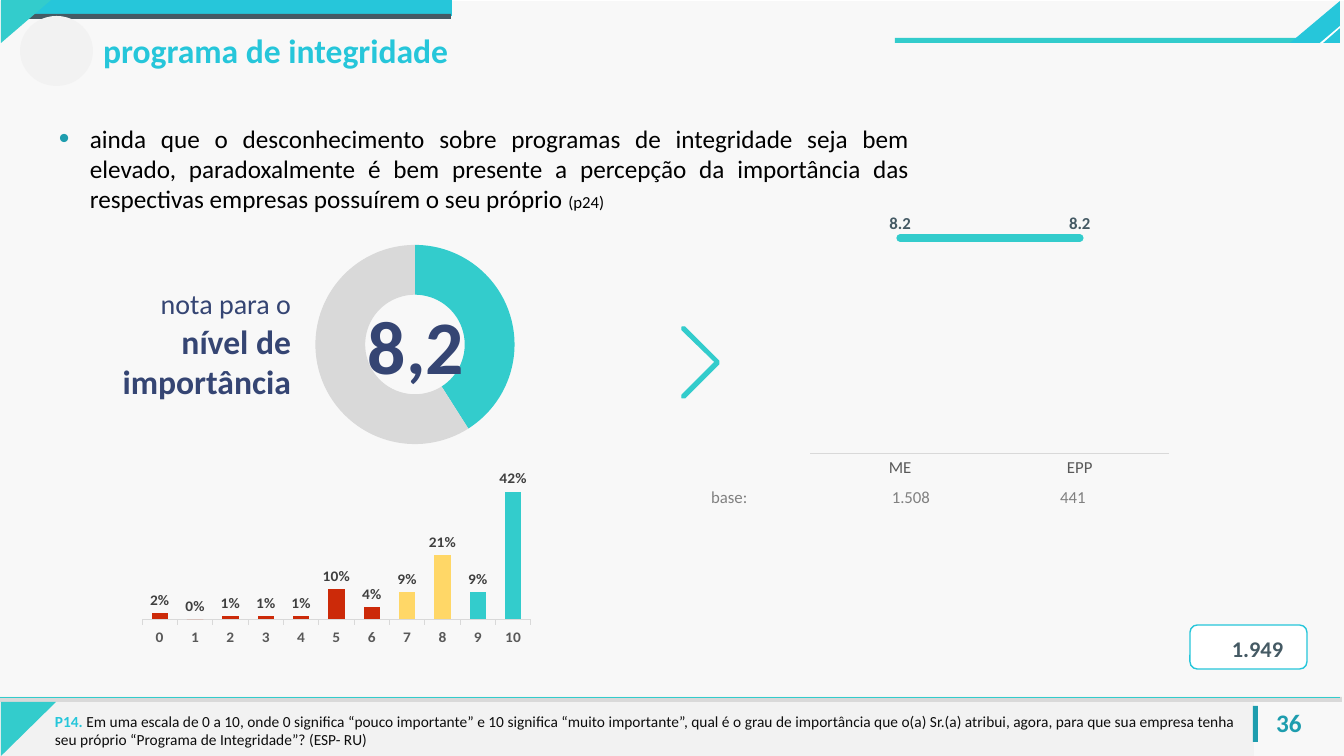
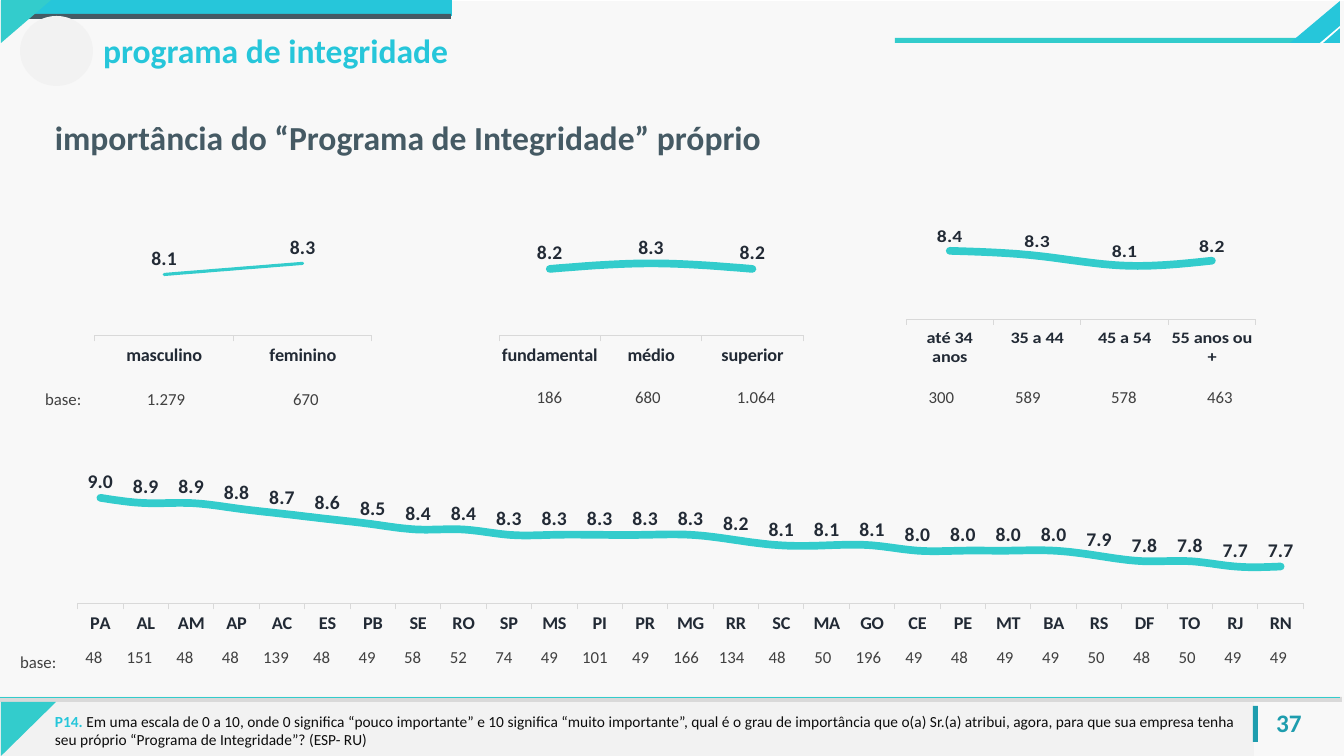
import pptx
import pptx.chart.data
import pptx.dml.color
import pptx.enum.chart
import pptx.enum.dml
import pptx.enum.shapes
import pptx.enum.text
import pptx.oxml.ns
import pptx.util
from lxml import etree

PX = 9071  # EMU in one px
RGB = pptx.dml.color.RGBColor.from_string
Pt = pptx.util.Pt
qn = pptx.oxml.ns.qn
Kind = pptx.enum.chart.XL_CHART_TYPE
Spot = pptx.enum.chart.XL_LABEL_POSITION
Tick = pptx.enum.chart.XL_TICK_MARK
Shape = pptx.enum.shapes.MSO_SHAPE
Align = pptx.enum.text.PP_ALIGN
Anchor = pptx.enum.text.MSO_ANCHOR


class Theme:
    font = "Calibri"
    cyan, teal, deep = RGB("26C6DA"), RGB("33CCCC"), RGB("1E9DAE")
    slate, navy, ink = RGB("455A64"), RGB("354573"), RGB("222A35")
    black, near, dark = RGB("000000"), RGB("0D0D0D"), RGB("404040")
    mid, soft, rule = RGB("595959"), RGB("808080"), RGB("D9D9D9")
    pale, mist, white = RGB("F2F2F2"), RGB("F8F8F8"), RGB("FFFFFF")
    red, gold = RGB("CC2A09"), RGB("FFD767")
    tiny, note, small, name, tag = 10, 11, 12, 13, 14
    badge, body, lead, head, huge = 16, 18, 20, 24, 54


def write(para, text, size, tint, bold=False, align=Align.LEFT):
    """Fill a paragraph; text may be a list of runs."""
    for words in [text] if isinstance(text, str) else text:
        para.add_run().text = words
    font = para.font
    font.name, font.size, font.bold = Theme.font, Pt(size), bold
    font.color.rgb = tint
    para.alignment = align
    return para


def graph(slide, kind, box, cats, vals, axis=None, label=None, form="0.0"):
    """Add a one-series chart; axis and label are (size, colour, bold)."""
    data = pptx.chart.data.CategoryChartData(number_format=form)
    data.categories = cats
    data.add_series("Series 1", vals)
    chart = slide.shapes.add_chart(kind, *[n * PX for n in box], data).chart
    chart.has_legend = chart.has_title = False
    chart.font.name, chart.font.size = Theme.font, Pt(Theme.tiny)
    if not axis:
        return chart
    base, side, plot = chart.category_axis, chart.value_axis, chart.plots[0]
    side.visible = side.has_major_gridlines = False
    base.has_major_gridlines = False
    base.format.line.color.rgb = Theme.rule
    base.format.line.width = Pt(0.75)
    plot.vary_by_categories = False
    plot.has_data_labels = True
    tags = plot.data_labels
    tags.show_value = True
    tags.number_format, tags.number_format_is_linked = form, False
    for font, (size, tint, bold) in ((base.tick_labels.font, axis), (tags.font, label)):
        font.name, font.size, font.bold = Theme.font, Pt(size), bold
        font.color.rgb = tint
    return chart


deck = pptx.Presentation()
deck.slide_width, deck.slide_height = 1344 * PX, 756 * PX
layout = deck.slide_layouts[5]
one, two = [deck.slides.add_slide(layout) for _ in range(2)]

# Shared bands, drawn once and moved to the layout
bands = [
    (0, 0, 1344, 756, Theme.mist),
    (0, 702, 1254, 54, Theme.pale),
    (9, 0, 443, 16, Theme.cyan),
    (0, 697, 1342, 5, Theme.rule),
    (23, 14, 428, 5, Theme.slate),
    (895, 38, 443, 5, Theme.teal),
    (1253, 706, 5, 36, Theme.deep),
]
for x, y, w, h, tint in bands:
    band = one.shapes.add_shape(Shape.RECTANGLE, x * PX, y * PX, w * PX, h * PX)
    band.shadow.inherit = False
    band.line.fill.background()
    if tint == Theme.mist:
        band.fill.patterned()
        band.fill.pattern = pptx.enum.dml.MSO_PATTERN.DARK_HORIZONTAL
        band.fill.fore_color.rgb, band.fill.back_color.rgb = tint, Theme.white
    else:
        band.fill.solid()
        band.fill.fore_color.rgb = tint

# Corner outlines, and the chevron that stays on the first slide
forms = [
    ([(1, 0), (51, 0), (1, 43)], Theme.teal),
    ([(1340, 1), (1290, 43), (1340, 43)], Theme.cyan),
    ([(1340, 28), (1340, 26), (1320, 43), (1323, 43)], Theme.white),
    ([(1, 702), (56, 702), (1, 756)], Theme.teal),
    ([(682, 327), (685, 327), (719, 361), (719, 364), (685, 398),
      (682, 398), (682, 395), (715, 362), (682, 330)], Theme.teal),
]
for dots, tint in forms:
    pen = one.shapes.build_freeform(*dots[0], scale=PX)
    pen.add_line_segments(dots[1:])
    form = pen.convert_to_shape()
    form.shadow.inherit = False
    form.fill.solid()
    form.fill.fore_color.rgb = tint
    form.line.fill.background()
form.line.color.rgb = Theme.teal
form.line.width = Pt(0.75)

line = one.shapes.add_connector(
    pptx.enum.shapes.MSO_CONNECTOR.STRAIGHT, 0, 697 * PX, 1340 * PX, 697 * PX)
line.line.color.rgb = Theme.teal
line.line.width = Pt(0.5)
etree.SubElement(line.element.spPr, qn("a:effectLst"))

shared = [s for s in one.shapes if not s.is_placeholder and s.shape_id != form.shape_id]
for n, item in enumerate(shared):
    item.element.xpath(".//p:cNvPr")[0].set("id", str(20 + n))
    layout.shapes.element.insert(2 + n, item.element)

# Title, disc, page number and question on both slides
asks = ["P14. ", "Em uma escala de 0 a 10, onde 0 significa “pouco importante” e 10 "
        "significa “muito importante”, qual é o grau de importância que o(a) Sr.(a) "
        "atribui, agora, para que sua empresa tenha seu próprio “Programa de "
        "Integridade”? (ESP- RU)"]
for page, slide in enumerate((one, two), 36):
    title = slide.shapes.title
    title.left, title.top, title.width, title.height = 93 * PX, 25 * PX, 588 * PX, 50 * PX
    title.text_frame.vertical_anchor = Anchor.TOP
    write(title.text_frame.paragraphs[0], "programa de integridade",
          Theme.head, Theme.cyan, True)
    disc = slide.shapes.add_shape(Shape.OVAL, 20 * PX, 16 * PX, 73 * PX, 70 * PX)
    disc.shadow.inherit = False
    disc.fill.solid()
    disc.fill.fore_color.rgb = Theme.pale
    disc.line.fill.background()
    box = slide.shapes.add_textbox(1258 * PX, 702 * PX, 62 * PX, 40 * PX)
    write(box.text_frame.paragraphs[0], str(page), Theme.body, Theme.deep, True, Align.CENTER)
    box = slide.shapes.add_textbox(45 * PX, 707 * PX, 1211 * PX, 47 * PX)
    box.text_frame.word_wrap = True
    para = write(box.text_frame.paragraphs[0], asks, Theme.note, Theme.near)
    para.runs[0].font.bold = True
    para.runs[0].font.color.rgb = Theme.cyan

# Ring and bars of the first slide
ring = graph(one, Kind.DOUGHNUT, (269, 231, 292, 227), ["1", "2"], [41, 59], form="0")
ring.element.xpath(".//c:holeSize")[0].set("val", "85")
bars = graph(one, Kind.COLUMN_CLUSTERED, (134, 470, 405, 180), [str(n) for n in range(11)],
             [0.02, 0, 0.01, 0.01, 0.01, 0.1, 0.04, 0.09, 0.21, 0.09, 0.42],
             (Theme.note, Theme.mid, True), (Theme.note, Theme.dark, True), "0%")
bars.plots[0].gap_width = 115
bars.plots[0].data_labels.position = Spot.OUTSIDE_END
tints = [Theme.red] * 7 + [Theme.gold] * 2 + [Theme.teal] * 2
for chart, hues in ((ring, [Theme.teal, Theme.rule]), (bars, tints)):
    for n, tint in enumerate(hues):
        fill = chart.plots[0].series[0].points[n].format.fill
        fill.solid()
        fill.fore_color.rgb = tint

# Line charts: slide, box, names, values, lowest, highest, line width
states = ("PA AL AM AP AC ES PB SE RO SP MS PI PR MG RR SC MA GO CE PE MT BA "
          "RS DF TO RJ RN").split()
marks = [9, 8.9, 8.9, 8.8, 8.7, 8.6, 8.5, 8.4, 8.4, 8.3, 8.3, 8.3, 8.3, 8.3, 8.2,
         8.1, 8.1, 8.1, 8, 8, 8, 8, 7.9, 7.8, 7.8, 7.7, 7.7]
lines = [
    (one, (803, 211, 374, 272), ["ME", "EPP"], [8.2, 8.2], 8, 8.22, 5.5),
    (two, (83, 196, 298, 171), ["masculino", "feminino"], [8.1, 8.3], 7, 9, 2.25),
    (two, (486, 196, 327, 171), ["fundamental", "médio", "superior"],
     [8.2, 8.3, 8.2], 7, 9, 5.5),
    (two, (891, 196, 376, 171), ["até 34 anos", "35 a 44", "45 a 54", "55 anos ou +"],
     [8.4, 8.3, 8.1, 8.2], 7, 9, 5.5),
    (two, (25, 464, 1318, 171), states, marks, 7, 9.1, 5.5),
]
for slide, box, cats, vals, low, high, wide in lines:
    first = slide is one
    axis = (Theme.small, Theme.mid, False) if first else (Theme.name, Theme.ink, True)
    label = (Theme.small, Theme.slate, True) if first else (Theme.tag, Theme.ink, True)
    chart = graph(slide, Kind.LINE, box, cats, vals, axis, label)
    chart.value_axis.minimum_scale, chart.value_axis.maximum_scale = low, high
    chart.category_axis.major_tick_mark = Tick.NONE if first else Tick.OUTSIDE
    chart.plots[0].data_labels.position = Spot.ABOVE
    curve = chart.plots[0].series[0]
    curve.smooth = True
    curve.format.line.color.rgb = Theme.teal
    curve.format.line.width = Pt(wide)
    area = chart.element.xpath(".//c:plotArea")[0]
    area.xpath(".//c:ser/c:spPr/a:ln")[0].set("cap", "rnd")
    if not first:
        for old in area.xpath("c:layout"):
            area.remove(old)
        place = etree.Element(qn("c:layout"))
        area.insert(0, place)
        place = etree.SubElement(place, qn("c:manualLayout"))
        for tag, val in (("layoutTarget", "inner"), ("xMode", "edge"), ("yMode", "edge"),
                         ("x", "0.04"), ("y", "0.17"), ("w", "0.93"), ("h", "0.66")):
            etree.SubElement(place, qn("c:" + tag)).set("val", val)

# Base rows: slide, left, top, widths, cells, aligns, indented cell
counts = ("48 151 48 48 139 48 49 58 52 74 49 101 49 166 134 48 50 196 49 48 49 49 "
          "50 48 50 49 49").split()
rows = [
    (one, 701, 472, [65, 271, 72], ["base:", "1.508", "441"], "lcc", 1),
    (two, 35, 374, [83, 165, 65], ["base:", "1.279", "670"], "lll", 1),
    (two, 486, 372, [108] * 3, ["186", "680", "1.064"], "ccc", 0),
    (two, 884, 372, [96] * 4, ["300", "589", "578", "463"], "cccc", 0),
    (two, 10, 637, [61] + [45.6] * 27, ["base:"] + counts, "l" + "c" * 27, None),
]
for slide, x, y, wides, cells, sides, inset in rows:
    frame = slide.shapes.add_table(
        1, len(cells), x * PX, y * PX, round(sum(wides) * PX), 37 * PX)
    table = frame.table
    table.first_row = table.horz_banding = False
    style = frame.element.xpath(".//a:tableStyleId")[0]
    style.text = "{2D5ABB26-0587-4C30-8999-92F81FD0307C}"
    for n, text in enumerate(cells):
        table.columns[n].width = round(wides[n] * PX)
        cell = table.cell(0, n)
        cell.fill.background()
        para = write(cell.text_frame.paragraphs[0], text, Theme.small,
                     Theme.soft if slide is one else Theme.dark,
                     align=Align.LEFT if sides[n] == "l" else Align.CENTER)
        if inset is None and n:
            cell.vertical_anchor = Anchor.MIDDLE
            cell.margin_left = cell.margin_right = cell.margin_top = PX
            cell.margin_bottom = 0
        else:
            para.line_spacing = 1.5
        if n == inset:
            cell.margin_left = 29 * PX

# Sample badge of the first slide
badge = one.shapes.add_shape(
    Shape.ROUNDED_RECTANGLE, 1190 * PX, 625 * PX, 117 * PX, 44 * PX)
badge.shadow.inherit = False
badge.fill.solid()
badge.fill.fore_color.rgb = Theme.white
badge.line.color.rgb = Theme.cyan
badge.line.width = Pt(1)

# Single texts: slide, box, paragraphs as (text, size, bold), colour, align, spacing
texts = [
    (one, (1208, 633, 99, 36), [("1.949", Theme.badge, True)],
     Theme.slate, Align.CENTER, 0.9),
    (one, (351, 304, 130, 65), [("8,2", Theme.huge, True)], Theme.navy, Align.CENTER, 0.9),
    (one, (57, 282, 244, 126), [("nota para o", Theme.lead, False),
                                ("nível de importância", Theme.head, True)],
     Theme.navy, Align.RIGHT, None),
    (two, (45, 112, 1233, 50), [("importância do “Programa de Integridade” próprio",
                                 Theme.head, True)], Theme.slate, Align.LEFT, None),
    (one, (49, 118, 870, 102), [(
        ["ainda que o desconhecimento sobre programas de integridade seja bem elevado, "
         "paradoxalmente é bem presente a percepção da importância das respectivas "
         "empresas possuírem o seu próprio ", "(p24)"], Theme.body, False)],
     Theme.black, Align.JUSTIFY, None),
]
for slide, box, paras, tint, align, gap in texts:
    frame = slide.shapes.add_textbox(*[n * PX for n in box]).text_frame
    frame.word_wrap = True
    for n, (text, size, bold) in enumerate(paras):
        para = frame.add_paragraph() if n else frame.paragraphs[0]
        write(para, text, size, tint, bold, align)
        if gap:
            para.line_spacing = gap

# Bullet of the lead sentence, the last text written
para.runs[1].font.size = Pt(Theme.small)
props = para._p.get_or_add_pPr()
props.set("marL", str(31 * PX))
props.set("indent", str(-31 * PX))
paint = etree.Element(qn("a:buClr"))
etree.SubElement(paint, qn("a:srgbClr")).set("val", str(Theme.deep))
scale = etree.Element(qn("a:buSzPct"), val="120000")
face = etree.Element(qn("a:buFont"), typeface="Arial")
dot = etree.Element(qn("a:buChar"), char="•")
for n, node in enumerate((paint, scale, face, dot)):
    props.insert(n, node)

deck.save("out.pptx")
